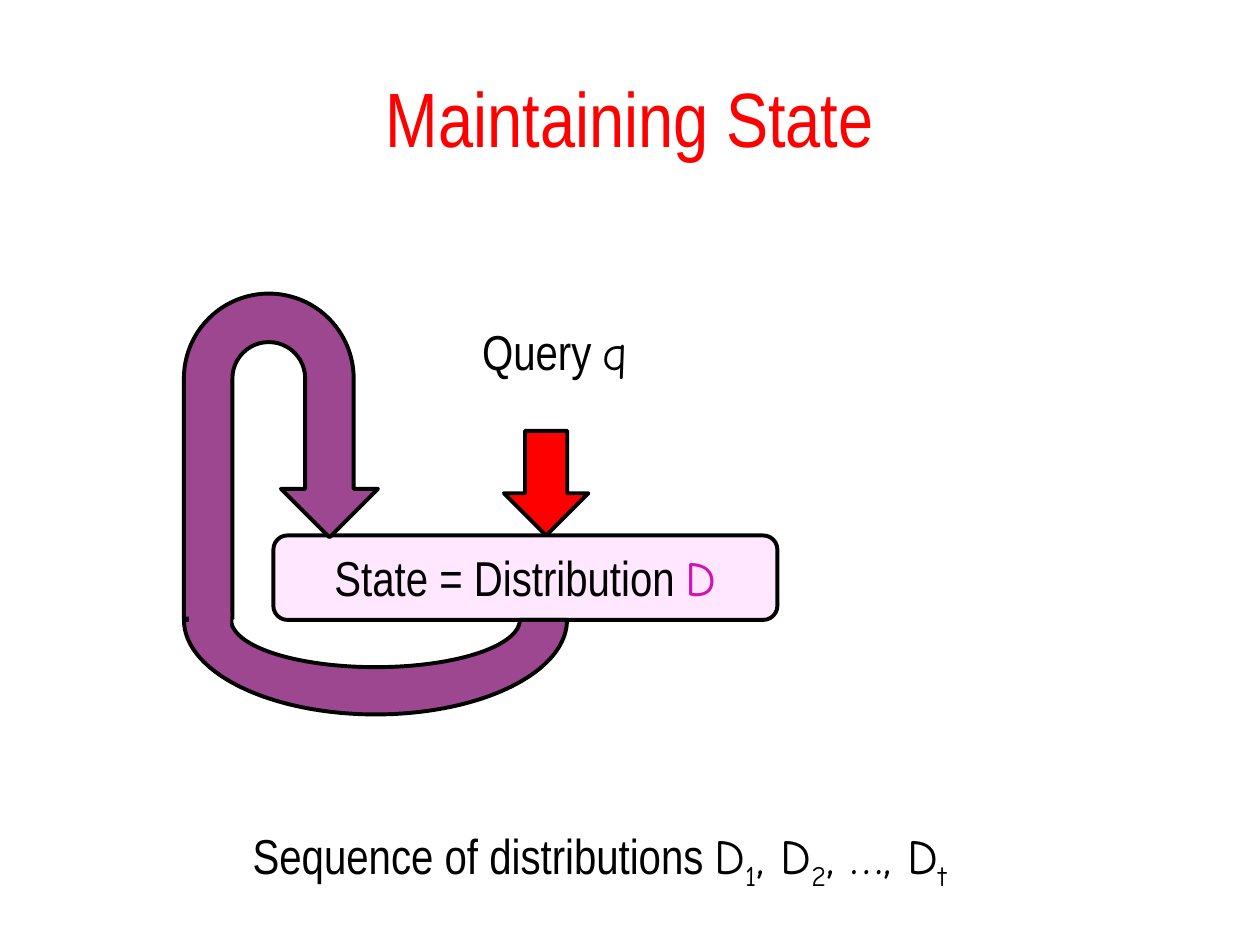
from dataclasses import dataclass

from lxml import etree
from pptx import Presentation
from pptx.dml.color import RGBColor
from pptx.enum.shapes import MSO_SHAPE
from pptx.enum.text import MSO_ANCHOR, PP_ALIGN
from pptx.oxml.ns import qn
from pptx.util import Inches, Pt

BOX = MSO_SHAPE.FLOWCHART_ALTERNATE_PROCESS
ARC = MSO_SHAPE.BLOCK_ARC
TURN = MSO_SHAPE.U_TURN_ARROW
DOWN = MSO_SHAPE.DOWN_ARROW
RECT = MSO_SHAPE.RECTANGLE
CENTER = PP_ALIGN.CENTER
MIDDLE = MSO_ANCHOR.MIDDLE

COLORS = {
    "red": "FF0000",
    "black": "000000",
    "pink": "FFCCFF",
    "plum": "9D4791",
    "rose": "D113B6",
}
SANS = "Arial Narrow"
HAND = "Comic Neue"


@dataclass
class Part:
    kind: int
    at: tuple
    fill: str
    turn: int = 0
    alpha: int = 100
    line: bool = True


@dataclass
class Bit:
    text: str
    font: str = HAND
    color: str = "black"
    base: int = 0


@dataclass
class Label:
    at: tuple
    bits: list


PARTS = [
    Part(BOX, (2.17, 4.25, 4, 0.67), "pink", alpha=47),
    Part(ARC, (1.46, 4.17, 3.04, 1.5), "plum", turn=180),
    Part(TURN, (1.46, 2.33, 1.54, 2.58), "plum"),
    Part(DOWN, (4, 3.42, 0.67, 0.83), "red"),
    Part(RECT, (1.5, 4.87, 0.33, 0.08), "plum", line=False),
]

LABELS = [
    Label((3.57, 2.5, 1.67, 0.58), [Bit("Query ", SANS), Bit("q")]),
    Label((2.38, 4.3, 3.58, 0.57),
          [Bit("State = Distribution ", SANS), Bit("D", color="rose")]),
    Label((0.92, 6.5, 7.75, 0.57),
          [Bit("Sequence of distributions ", SANS),
           Bit("D"), Bit("1", base=-25),
           Bit(", D"), Bit("2", base=-25),
           Bit(", …, D"), Bit("t ", base=-25)]),
]


def shade(name: str) -> RGBColor:
    return RGBColor.from_string(COLORS[name])


def write(para, text: str, *, font: str = SANS, size: int = 28,
          color: str = "black", base: int = 0) -> None:
    para.alignment = CENTER
    run = para.add_run()
    run.text = text
    run.font.name = font
    run.font.size = Pt(size)
    run.font.color.rgb = shade(color)
    if base:
        run._r.get_or_add_rPr().set("baseline", str(base * 1000))


def draw_part(slide, part: Part) -> None:
    shape = slide.shapes.add_shape(part.kind, *map(Inches, part.at))
    shape.shadow.inherit = False
    shape.rotation = part.turn
    shape.fill.solid()
    shape.fill.fore_color.rgb = shade(part.fill)
    if part.alpha < 100:
        tint = shape._element.spPr.find(qn("a:solidFill"))[0]
        etree.SubElement(tint, qn("a:alpha")).set("val", str(part.alpha * 1000))
    if part.line:
        shape.line.color.rgb = shade("black")
        shape.line.width = Pt(2.25)
    else:
        shape.line.fill.background()


def draw_label(slide, label: Label) -> None:
    frame = slide.shapes.add_textbox(*map(Inches, label.at)).text_frame
    frame.word_wrap = True
    for bit in label.bits:
        write(frame.paragraphs[0], bit.text, font=bit.font,
              color=bit.color, base=bit.base)


def draw_title(slide, text: str) -> None:
    title = slide.shapes.title
    title.left, title.top = Inches(0.5), Inches(0.3)
    title.width, title.height = Inches(9), Inches(1.25)
    title.text_frame.vertical_anchor = MIDDLE
    write(title.text_frame.paragraphs[0], text, size=44, color="red")


def main() -> None:
    deck = Presentation()
    deck.slide_width, deck.slide_height = Inches(10), Inches(7.5)
    slide = deck.slides.add_slide(deck.slide_layouts[5])
    draw_title(slide, "Maintaining State")
    for part in PARTS:
        draw_part(slide, part)
    for label in LABELS:
        draw_label(slide, label)
    deck.save("out.pptx")


if __name__ == "__main__":
    main()
